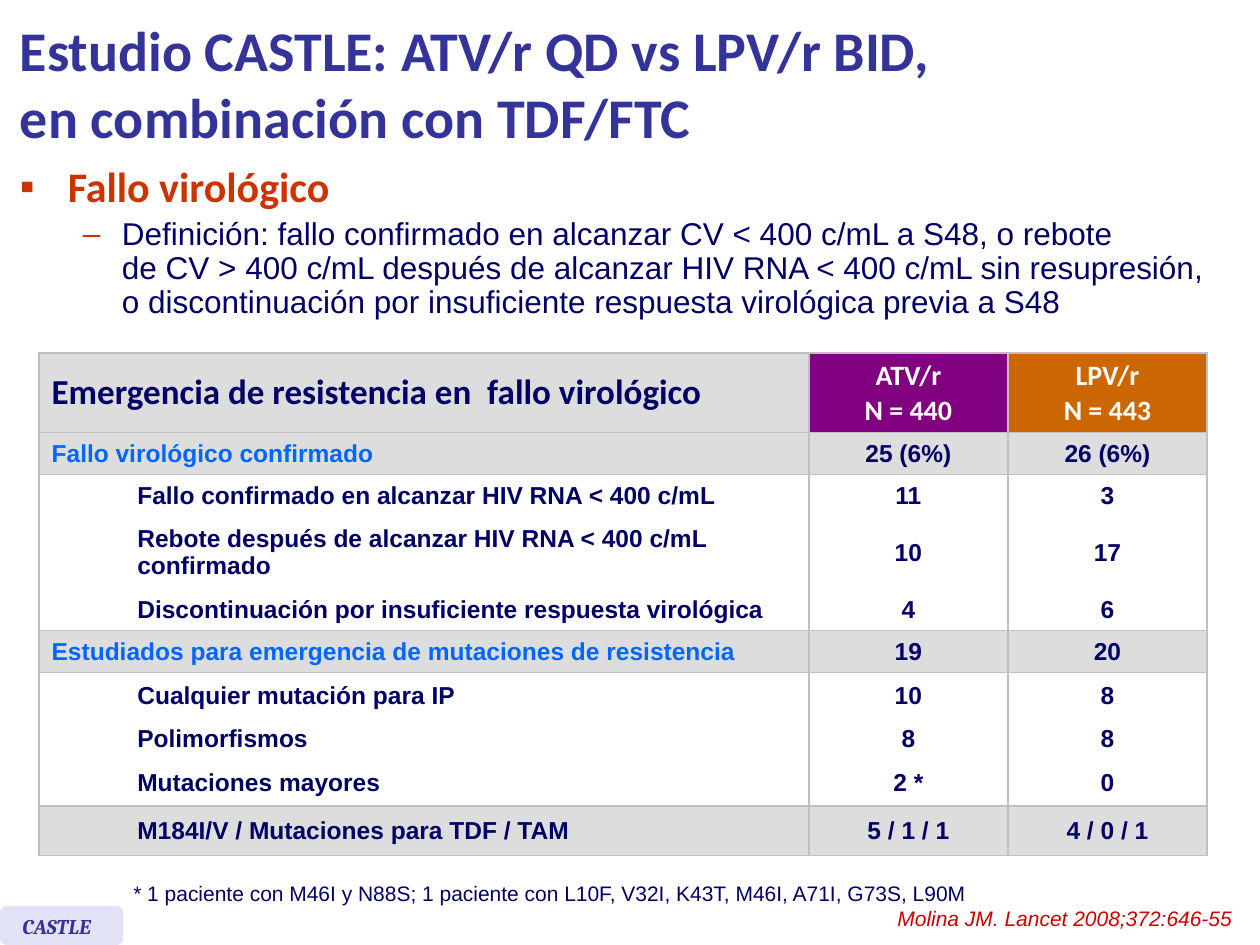
from lxml import etree
from pptx import Presentation
from pptx.dml.color import RGBColor
from pptx.enum.shapes import MSO_SHAPE
from pptx.enum.text import MSO_ANCHOR, PP_ALIGN
from pptx.oxml import parse_xml
from pptx.oxml.ns import nsdecls, qn
from pptx.util import Inches, Pt

ROUND = MSO_SHAPE.ROUNDED_RECTANGLE
MIDDLE = MSO_ANCHOR.MIDDLE
LEFT, CENTER, RIGHT = PP_ALIGN.LEFT, PP_ALIGN.CENTER, PP_ALIGN.RIGHT

INDIGO = RGBColor(0x33, 0x33, 0x99)
LILAC = RGBColor(0xE2, 0xE2, 0xF6)
RUST = RGBColor(0xCC, 0x33, 0x00)
NAVY = RGBColor(0x00, 0x00, 0x66)
BLUE = RGBColor(0x00, 0x66, 0xFF)
RED = RGBColor(0xCC, 0x00, 0x00)
PURPLE = RGBColor(0x80, 0x00, 0x80)
ORANGE = RGBColor(0xCC, 0x66, 0x00)
GREY = RGBColor(0xDD, 0xDD, 0xDD)
SILVER = RGBColor(0xC0, 0xC0, 0xC0)
WHITE = RGBColor(0xFF, 0xFF, 0xFF)


def write(para, text, size, color, face="Arial", bold=False, italic=False):
    """Add one run per line of text, with line breaks between them."""
    for i, line in enumerate(text.split("\n")):
        if i:
            para.add_line_break()
        run = para.add_run()
        run.text = line
        font = run.font
        font.name, font.size, font.bold, font.italic = face, Pt(size), bold, italic
        font.color.rgb = color


def add_box(shapes, left, top, width, height):
    box = shapes.add_textbox(Inches(left), Inches(top), Inches(width), Inches(height))
    box.text_frame.word_wrap = True
    return box.text_frame


prs = Presentation()
prs.slide_width, prs.slide_height = Inches(10), Inches(7.5)
slide = prs.slides.add_slide(prs.slide_layouts[6])
shapes = slide.shapes

# Study tag
group = shapes.add_group_shape()
tag = group.shapes.add_shape(ROUND, Inches(0), Inches(7.19), Inches(0.98), Inches(0.31))
tag.shadow.inherit = False
tag.fill.solid()
tag.fill.fore_color.rgb = LILAC
tag.line.fill.background()
frame = add_box(group.shapes, 0.08, 7.2, 0.88, 0.3)
write(frame.paragraphs[0], "CASTLE", 12, INDIGO, "Cambria", True, True)

# Title
frame = add_box(shapes, 0.06, 0.05, 8.96, 1.21)
frame.vertical_anchor = MIDDLE
write(frame.paragraphs[0],
      "Estudio CASTLE: ATV/r QD vs LPV/r BID,\nen combinación con TDF/FTC",
      32, INDIGO, "Calibri", True)

# Definition
definition = ("Definición: fallo confirmado en alcanzar CV < 400 c/mL a S48, o rebote\n"
              "de CV > 400 c/mL después de alcanzar HIV RNA < 400 c/mL sin resupresión,\n"
              "o discontinuación por insuficiente respuesta virológica previa a S48")
frame = add_box(shapes, 0.06, 1.27, 9.87, 1.35)
points = [
    ("▪", 0.38, 0.38, 0, "Fallo virológico", 24, RUST, "Calibri", True),
    ("–", 0.81, 0.31, 4, definition, 18, NAVY, "Arial", False),
]
for i, (mark, margin, hang, gap, text, size, color, face, bold) in enumerate(points):
    para = frame.add_paragraph() if i else frame.paragraphs[0]
    para.level = i
    para.line_spacing = 0.9
    para.space_before = Pt(gap)
    props = para._p.get_or_add_pPr()
    props.set("marL", str(Inches(margin)))
    props.set("indent", str(-Inches(hang)))
    tint = etree.SubElement(props, qn("a:buClr"))
    etree.SubElement(tint, qn("a:srgbClr")).set("val", str(RUST))
    etree.SubElement(props, qn("a:buFont")).set("typeface", "Arial")
    etree.SubElement(props, qn("a:buChar")).set("char", mark)
    write(para, text, size, color, face, bold)

# Table: a row with text in its first column spans two columns
rows = [
    (0.63, "Emergencia de resistencia en  fallo virológico", "", "ATV/r\nN = 440", "LPV/r\nN = 443"),
    (0.33, "Fallo virológico confirmado", "", "25 (6%)", "26 (6%)"),
    (0.33, "", "Fallo confirmado en alcanzar HIV RNA < 400 c/mL", "11", "3"),
    (0.57, "", "Rebote después de alcanzar HIV RNA < 400 c/mL confirmado", "10", "17"),
    (0.33, "", "Discontinuación por insuficiente respuesta virológica", "4", "6"),
    (0.33, "Estudiados para emergencia de mutaciones de resistencia", "", "19", "20"),
    (1.06, "", ["Cualquier mutación para IP", "Polimorfismos", "Mutaciones mayores"],
     ["10", "8", "2 *"], ["8", "8", "0"]),
    (0.39, "", "M184I/V / Mutaciones para TDF / TAM", "5 / 1 / 1", "4 / 0 / 1"),
]
widths = [0.68, 5.43, 1.58, 1.58]
HEADS = {2: PURPLE, 3: ORANGE}
OPEN_TOP, OPEN_BOTTOM = (3, 4), (2, 3)
last = len(rows) - 1

table = shapes.add_table(len(rows), len(widths), Inches(0.31), Inches(2.8),
                         Inches(9.26), Inches(3.98)).table
for col, width in zip(table.columns, widths):
    col.width = Inches(width)
for r, (height, *texts) in enumerate(rows):
    table.rows[r].height = Inches(height)
    wide = bool(texts[0])
    if wide:
        table.cell(r, 0).merge(table.cell(r, 1))
    for c, text in enumerate(texts):
        cell = table.cell(r, c)
        cell.vertical_anchor = MIDDLE
        cell.fill.solid()
        fill = GREY if wide or r == last else WHITE
        cell.fill.fore_color.rgb = HEADS.get(c, fill) if r == 0 else fill

        size, color, face = 14, BLUE if wide and c == 0 else NAVY, "Arial"
        if r == 0:
            size, color, face = (16, WHITE, "Calibri") if c in HEADS else (20, NAVY, "Calibri")
        lines = text if isinstance(text, list) else [text]
        for i, line in enumerate(lines):
            para = cell.text_frame.add_paragraph() if i else cell.text_frame.paragraphs[0]
            para.alignment = CENTER if c > 1 else LEFT
            para.space_before = Pt(9 if i else 0)
            if line:
                write(para, line, size, color, face, True)
            else:
                etree.SubElement(para._p, qn("a:endParaRPr")).set("sz", "1400")

        edges = {"lnL": c != 1, "lnR": c > 0 or wide,
                 "lnT": r not in OPEN_TOP, "lnB": r not in OPEN_BOTTOM}
        for i, (edge, drawn) in enumerate(edges.items()):
            paint = f'<a:solidFill><a:srgbClr val="{SILVER}"/></a:solidFill>' if drawn else "<a:noFill/>"
            line = parse_xml(f'<a:{edge} {nsdecls("a")} w="{Pt(1)}">{paint}</a:{edge}>')
            cell._tc.get_or_add_tcPr().insert(i, line)

# Footnote and source
frame = add_box(shapes, 0.96, 6.94, 6.9, 0.3)
write(frame.paragraphs[0],
      "* 1 paciente con M46I y N88S; 1 paciente con L10F, V32I, K43T, M46I, A71I, G73S, L90M",
      12, NAVY)
frame = add_box(shapes, 6.88, 7.14, 3, 0.3)
frame.paragraphs[0].alignment = RIGHT
write(frame.paragraphs[0], "Molina JM. Lancet 2008;372:646-55", 12, RED, italic=True)

prs.save("out.pptx")
